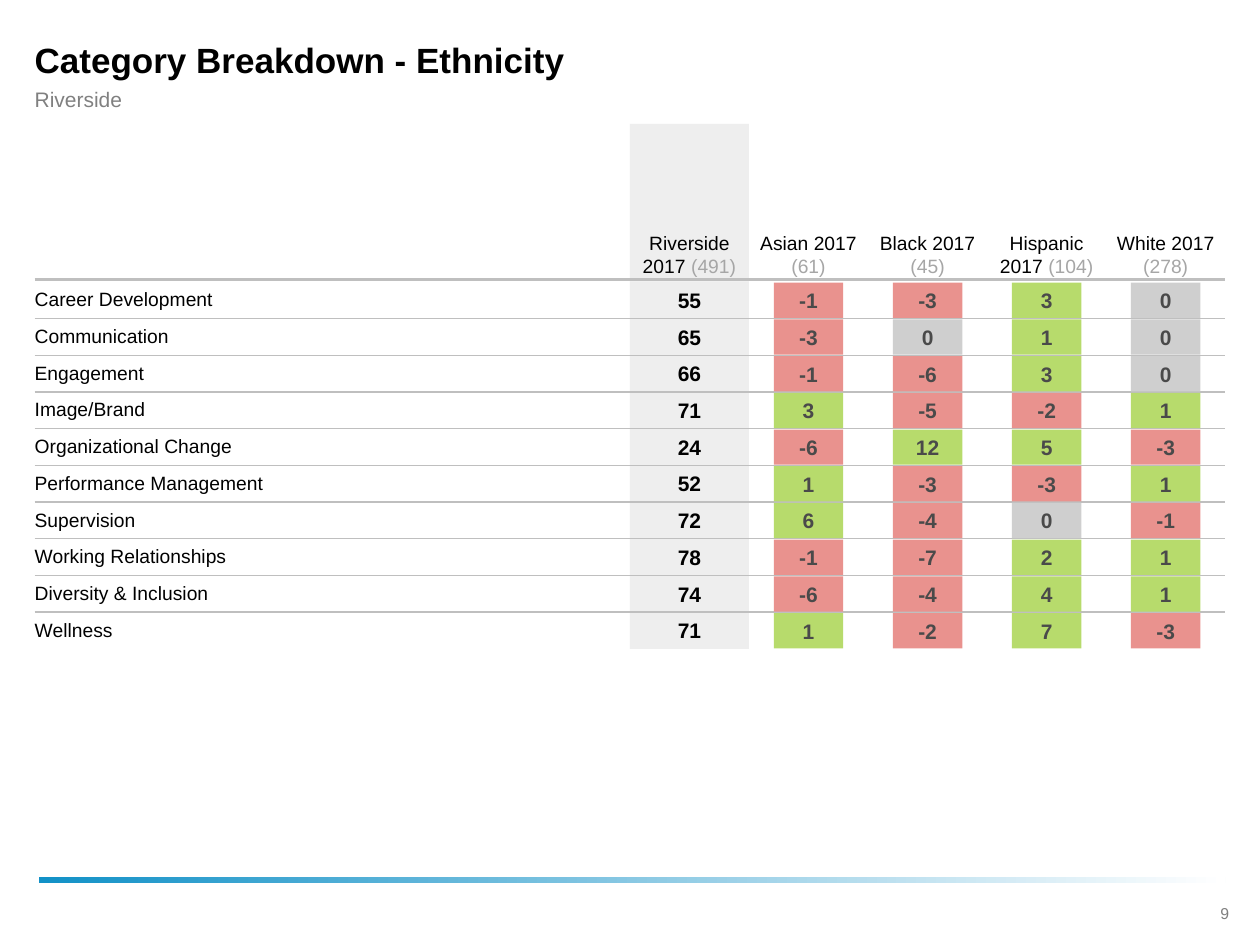
from lxml.etree import SubElement
from pptx import Presentation
from pptx.dml.color import RGBColor
from pptx.enum.shapes import MSO_CONNECTOR as Wire, MSO_SHAPE as Form
from pptx.enum.text import MSO_ANCHOR as Anchor, MSO_AUTO_SIZE as Auto, PP_ALIGN as Align
from pptx.oxml.ns import qn
from pptx.util import Cm, Pt

HEADS = [("Riverside 2017 ", "(491)"), ("Asian 2017 ", "(61)"), ("Black 2017 ", "(45)"),
         ("Hispanic 2017 ", "(104)"), ("White 2017 ", "(278)")]
ROWS = [
    ("Career Development", 55, (-1, -3, 3, 0)),
    ("Communication", 65, (-3, 0, 1, 0)),
    ("Engagement", 66, (-1, -6, 3, 0)),
    ("Image/Brand", 71, (3, -5, -2, 1)),
    ("Organizational Change", 24, (-6, 12, 5, -3)),
    ("Performance Management", 52, (1, -3, -3, 1)),
    ("Supervision", 72, (6, -4, 0, -1)),
    ("Working Relationships", 78, (-1, -7, 2, 1)),
    ("Diversity & Inclusion", 74, (-6, -4, 4, 1)),
    ("Wellness", 71, (1, -2, 7, -3)),
]
LABEL, COL, ROW, HEAD = 12, 2.4, 0.74, 3.18
CHIP, TALL = 1.4, 0.71
EDGE = (0.08, 0.08, 0.08, 0.08)
BLACK = "000000"


def tint(code):
    return RGBColor.from_string(code)


def style(item, **values):
    for name, value in values.items():
        setattr(item, name, value)


def write(shape, parts, size, pad=(0, 0, 0, 0), bold=False, align=Align.LEFT,
          anchor=Anchor.MIDDLE, wrap=True):
    frame = shape.text_frame
    sides = ("margin_left", "margin_top", "margin_right", "margin_bottom")
    style(frame, word_wrap=wrap, vertical_anchor=anchor,
          **{side: Cm(gap) for side, gap in zip(sides, pad)})
    para = frame.paragraphs[0]
    para.alignment = align
    for words, code in parts:
        run = para.add_run()
        run.text = words
        style(run.font, name="Arial", size=Pt(size), bold=bold)
        run.font.color.rgb = tint(code)
    return frame


def label(slide, box, *args, **values):
    return write(slide.shapes.add_textbox(*map(Cm, box)), *args, **values)


def block(slide, box, code):
    shape = slide.shapes.add_shape(Form.RECTANGLE, *map(Cm, box))
    shape.shadow.inherit = False
    shape.line.fill.background()
    shape.fill.solid()
    shape.fill.fore_color.rgb = tint(code)
    return shape


def rule(slide, left, top, width, weight):
    line = slide.shapes.add_connector(
        Wire.STRAIGHT, Cm(left), Cm(top), Cm(left + width), Cm(top))
    line.line.width = Pt(weight)
    line.line.color.rgb = tint("BFBFBF")
    SubElement(line._element.spPr, qn("a:effectLst"))


def title(slide, left, top, width):
    pad = (0, 0, 0.89, 0)
    label(slide, (left, top, width, 0.97),
          [("Category Breakdown - Ethnicity", BLACK)], 20, pad, bold=True)
    label(slide, (left, top + 1.02, width, 0.53), [("Riverside", "808080")], 12, pad)


def header(slide, left, top, width):
    rule(slide, left, top + HEAD - 0.04, width, 1.5)
    for i, (name, count) in enumerate(HEADS):
        label(slide, (left + LABEL + i * COL, top, COL, HEAD),
              [(name, BLACK), (count, "A6A6A6")], 11, EDGE,
              align=Align.CENTER, anchor=Anchor.BOTTOM)


def record(slide, left, top, name, score, gaps):
    label(slide, (left, top + 0.06, LABEL, 0.58), [(name, BLACK)], 11)
    start = left + LABEL
    label(slide, (start, top, COL, ROW), [(str(score), BLACK)], 12, EDGE,
          bold=True, align=Align.CENTER)
    for i, gap in enumerate(gaps, 1):
        code = "B7DB6C" if gap > 0 else "E9928E" if gap < 0 else "CFCFCF"
        chip = block(slide, (start + i * COL + (COL - CHIP) / 2, top + 0.02, CHIP, TALL), code)
        write(chip, [(str(gap), "4A4A4A")], 12, (0, 0.13, 0, 0.13),
              bold=True, align=Align.CENTER, wrap=False)


def matrix(slide, left, top, width):
    body = top + HEAD
    tops = [body + i * ROW for i in range(len(ROWS))]
    for y in tops:
        block(slide, (left + LABEL, y, COL, ROW), "EEEEEE")
    block(slide, (left + LABEL, top, COL, HEAD), "EEEEEE")
    header(slide, left, top, width)
    for y, row in zip(tops, ROWS):
        if y != tops[-1]:
            rule(slide, left, y + ROW, width, 0.75)
        record(slide, left, y, *row)


def footer(slide, left, top, width):
    bar = block(slide, (left, top, width, 0.12), "1291C7")
    bar.fill.gradient()
    bar.fill.gradient_angle = 0
    for stop, code, place in zip(bar.fill.gradient_stops, ("1291C7", "FFFFFF"), (0, 1)):
        stop.color.rgb = tint(code)
        stop.position = place
    frame = label(slide, (left + width - 0.68, top + 0.41, 1.32, 0.64),
                  [("9", "7F7F7F")], 9, (0.25, 0.13, 0.25, 0.13),
                  align=Align.CENTER, anchor=Anchor.TOP)
    frame.auto_size = Auto.SHAPE_TO_FIT_TEXT


def main():
    deck = Presentation()
    style(deck, slide_width=Cm(25.4), slide_height=Cm(19.05))
    slide = deck.slides.add_slide(deck.slide_layouts[6])
    footer(slide, 0.78, 17.68, 23.93)
    title(slide, 0.7, 0.71, 24)
    matrix(slide, 0.7, 2.5, 24)
    deck.save("out.pptx")


if __name__ == "__main__":
    main()
